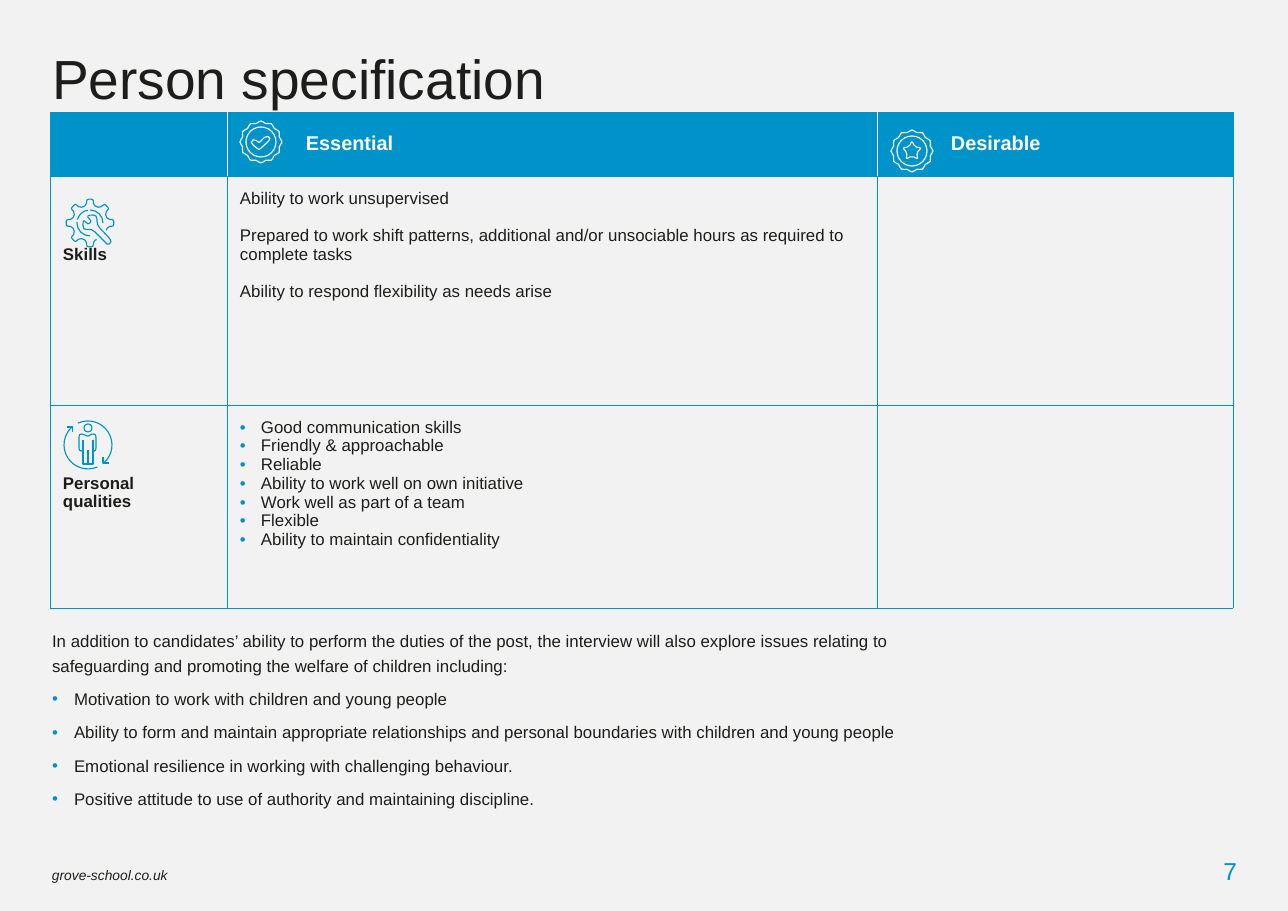
"""Build the person specification slide."""
import dataclasses
import math

import lxml.etree
import pptx
import pptx.dml.color
import pptx.enum.shapes
import pptx.enum.text
import pptx.oxml.ns
import pptx.util

PX = 8298
ALIGN = pptx.enum.text.PP_ALIGN
ANCHOR = pptx.enum.text.MSO_ANCHOR
qn = pptx.oxml.ns.qn


@dataclasses.dataclass(frozen=True)
class Theme:
    """Colours, typeface and type sizes."""
    paper: str = "F2F2F2"
    ink: str = "1D1D1B"
    blue: str = "0093C9"
    white: str = "FFFFFF"
    face: str = "Arial"
    title: int = 36
    number: int = 16
    heading: int = 13
    text: int = 11
    footer: int = 9
    border: float = 0.5
    stroke: float = 0.75


THEME = Theme()

ESSENTIAL_SKILLS = [
    "Ability to work unsupervised",
    "Prepared to work shift patterns, additional and/or unsociable hours as required to complete tasks",
    "Ability to respond flexibility as needs arise",
]
ESSENTIAL_QUALITIES = [
    "Good communication skills", "Friendly & approachable", "Reliable",
    "Ability to work well on own initiative", "Work well as part of a team",
    "Flexible", "Ability to maintain confidentiality",
]
INTERVIEW_INTRO = (
    "In addition to candidates’ ability to perform the duties of the post, the interview will also "
    "explore issues relating to safeguarding and promoting the welfare of children including:")
INTERVIEW_TOPICS = [
    "Motivation to work with children and young people",
    "Ability to form and maintain appropriate relationships and personal boundaries "
    "with children and young people",
    "Emotional resilience in working with challenging behaviour.",
    "Positive attitude to use of authority and maintaining discipline.",
]


def rgb(code):
    return pptx.dml.color.RGBColor.from_string(code)


def set_format(target, **values):
    for name, value in values.items():
        setattr(target, name, value)


def place(shape, left, top, width, height):
    set_format(shape, left=left * PX, top=top * PX, width=width * PX, height=height * PX)


def add_solid(parent, tag, color):
    fill = lxml.etree.SubElement(parent, qn(tag))
    lxml.etree.SubElement(fill, qn("a:srgbClr"), val=color)


def set_bullet(paragraph, indent):
    properties = paragraph._p.get_or_add_pPr()
    properties.set("marL", str(indent * PX))
    properties.set("indent", str(-indent * PX))
    if indent:
        add_solid(properties, "a:buClr", THEME.blue)
        lxml.etree.SubElement(properties, qn("a:buFont"), typeface=THEME.face)
        lxml.etree.SubElement(properties, qn("a:buChar"), char="•")
    else:
        lxml.etree.SubElement(properties, qn("a:buNone"))


def write(frame, lines, size=THEME.text, color=THEME.ink, bold=False, italic=False,
          indents=None, after=0, **layout):
    for index, line in enumerate(lines):
        paragraph = frame.add_paragraph() if index else frame.paragraphs[0]
        set_bullet(paragraph, indents[index] if indents else 0)
        set_format(paragraph, text=line, space_before=pptx.util.Pt(0),
                   space_after=pptx.util.Pt(after), **layout)
        set_format(paragraph.font, name=THEME.face, size=pptx.util.Pt(size), bold=bold, italic=italic)
        paragraph.font.color.rgb = rgb(color)


def set_frame(frame, anchor=ANCHOR.TOP):
    set_format(frame, margin_left=0, margin_top=0, margin_right=0, margin_bottom=0,
               word_wrap=True, auto_size=pptx.enum.text.MSO_AUTO_SIZE.NONE, vertical_anchor=anchor)


def add_label(slide, box, text, **style):
    shape = slide.shapes.add_textbox(0, 0, 0, 0)
    place(shape, *box)
    set_frame(shape.text_frame)
    write(shape.text_frame, [text], **style)


def set_borders(cell, colors):
    properties = cell._tc.get_or_add_tcPr()
    for index, (side, color) in enumerate(zip("LRTB", colors)):
        line = lxml.etree.Element(qn(f"a:ln{side}"), w=str(int(pptx.util.Pt(THEME.border))))
        add_solid(line, "a:solidFill", color)
        properties.insert(index, line)


def fill_cell(cell, fill, borders, lines=(), left=13, top=13, anchor=ANCHOR.TOP, **style):
    cell.fill.solid()
    cell.fill.fore_color.rgb = rgb(fill)
    set_format(cell, margin_left=left * PX, margin_top=top * PX, margin_right=13 * PX,
               margin_bottom=13 * PX, vertical_anchor=anchor)
    write(cell.text_frame, lines, **style)
    set_borders(cell, borders)


def add_specification(slide):
    widths, heights = (177, 650, 356), (64, 229, 203)
    frame = slide.shapes.add_table(3, 3, 50 * PX, 112 * PX, sum(widths) * PX, sum(heights) * PX)
    table = frame.table
    set_format(table, first_row=False, horz_banding=False)
    for column, width in zip(table.columns, widths):
        column.width = width * PX
    for row, height in zip(table.rows, heights):
        row.height = height * PX
    blue, white = THEME.blue, THEME.white
    headings = [([], 13, blue, white), (["Essential"], 79, white, white), (["Desirable"], 74, white, blue)]
    for column, (lines, left, left_color, right_color) in enumerate(headings):
        fill_cell(table.cell(0, column), blue, (left_color, right_color, blue, blue), lines, left,
                  anchor=ANCHOR.MIDDLE, size=THEME.heading, color=white, bold=True)
    label = {"top": 69, "bold": True}
    bullets = {"indents": [21] * len(ESSENTIAL_QUALITIES)}
    rows = [
        [(["Skills"], label), (ESSENTIAL_SKILLS, {"after": 12}), ([], {})],
        [(["Personal", "qualities"], label), (ESSENTIAL_QUALITIES, bullets), ([], {})],
    ]
    for row, cells in enumerate(rows, 1):
        for column, (lines, style) in enumerate(cells):
            fill_cell(table.cell(row, column), THEME.paper, [blue] * 4, lines, **style)


def polar(center, radius, degrees):
    angle = math.radians(degrees)
    return center[0] + radius * math.cos(angle), center[1] + radius * math.sin(angle)


def toward(start, end, share):
    return tuple(a + (b - a) * share for a, b in zip(start, end))


def arc(center, radius, start, end):
    count = math.ceil(abs(end - start) / 90)
    step = (end - start) / count
    reach = 4 / 3 * math.tan(math.radians(step) / 4)
    segments = [[polar(center, radius, start)]]
    for index in range(count):
        first, last = start + index * step, start + (index + 1) * step
        begin, finish = polar(center, radius, first), polar(center, radius, last)
        segments.append([polar(begin, radius * reach, first + 90),
                         polar(finish, radius * reach, last - 90), finish])
    return segments


def rounded(points, radius, closed=True):
    segments = []
    for index, point in enumerate(points):
        if not closed and index in (0, len(points) - 1):
            segments.append([point])
            continue
        before, after = (toward(point, other, min(0.5, radius / math.dist(point, other)))
                         for other in (points[index - 1], points[(index + 1) % len(points)]))
        segments += [[before], [toward(before, point, 2 / 3), toward(after, point, 2 / 3), after]]
    return segments


def scallops(center, tip, valley):
    segments = [[polar(center, tip, 0)]]
    for angle in range(0, 360, 15):
        near, far = (valley, tip) if angle % 30 else (tip, valley)
        segments.append([polar(center, near, angle + 5), polar(center, far, angle + 10),
                         polar(center, far, angle + 15)])
    return segments


def style_outline(shape, color):
    shape.fill.background()
    shape.shadow.inherit = False
    shape.line.color.rgb = rgb(color)
    shape.line.width = pptx.util.Pt(THEME.stroke)
    return shape


def add_outline(slide, segments, color=THEME.blue, closed=False):
    """Draw an outline whose segments hold one point for a line or three for a curve."""
    corners = [(x * PX, y * PX) for segment in segments for x, y in segment]
    builder = slide.shapes.build_freeform(*corners[0], scale=1.0)
    builder.add_line_segments(corners[1:], close=False)
    shape = builder.convert_to_shape()
    steps = list(shape._element.iter(qn("a:lnTo")))
    outline = steps[0].getparent()
    position = 0
    for segment in segments[1:]:
        if len(segment) == 3:
            curve = lxml.etree.Element(qn("a:cubicBezTo"))
            steps[position].addprevious(curve)
            for step in steps[position:position + 3]:
                curve.append(step[0])
                outline.remove(step)
        position += len(segment)
    if closed:
        lxml.etree.SubElement(outline, qn("a:close"))
    return style_outline(shape, color)


def add_circle(slide, center, radius, color=THEME.blue):
    shape = slide.shapes.add_shape(pptx.enum.shapes.MSO_SHAPE.OVAL, 0, 0, 0, 0)
    place(shape, center[0] - radius, center[1] - radius, 2 * radius, 2 * radius)
    return style_outline(shape, color)


def add_line(slide, start, end):
    line = slide.shapes.add_connector(pptx.enum.shapes.MSO_CONNECTOR.STRAIGHT,
                                      *(value * PX for value in (*start, *end)))
    line.line.color.rgb = rgb(THEME.blue)
    line.line.width = pptx.util.Pt(THEME.stroke)
    lxml.etree.SubElement(line._element.spPr, qn("a:effectLst"))
    return line


def add_badge(slide, center, emblem):
    slide.shapes.add_group_shape([
        add_outline(slide, scallops(center, 21, 19), THEME.white, closed=True),
        add_circle(slide, center, 15, THEME.white),
        add_outline(slide, rounded(emblem, 2), THEME.white, closed=True)])


def add_skills_icon(slide):
    center = (90, 223)
    gear = [polar(center, radius, tooth + offset) for tooth in range(90, 361, 45)
            for radius, offset in ((18, -11), (24, -8), (24, 8), (18, 11))]
    gear = [polar(center, 18, 68), *gear, polar(center, 18, 384)]
    wrench = [(111, 240), (97, 225), (97, 215), (89, 215), (87, 217), (92, 221), (88, 225),
              (84, 220), (83, 222), (83, 230), (92, 229), (106, 243), (108, 245), (111, 243)]
    sweeps = [(90, 180), (180, 185), (195, 260), (270, 360)]
    slide.shapes.add_group_shape([
        add_outline(slide, rounded(wrench, 4), closed=True),
        add_outline(slide, rounded(gear, 2, closed=False)),
        *(add_outline(slide, arc(center, 13, *sweep)) for sweep in sweeps)])


def add_qualities_icon(slide):
    center = (88, 445)
    torso = [(93, 451), (96, 451), (96, 434), (91, 434), (88, 437), (84, 434), (79, 434), (79, 451), (83, 451)]
    bends = [[(103, 457), (103, 463), (109, 463)], [(67, 427), (73, 427), (73, 432)],
             [(93, 440), (93, 464), (83, 464), (83, 440)]]
    strokes = [[[point] for point in bend] for bend in bends]
    strokes += [arc(center, 24, 50, -115), arc(center, 24, 230, 67), rounded(torso, 3, closed=False)]
    slide.shapes.add_group_shape([
        *(add_outline(slide, stroke) for stroke in strokes),
        add_circle(slide, (88, 428), 4), add_line(slide, (88, 450), (88, 464))])


def main():
    presentation = pptx.Presentation()
    set_format(presentation, slide_width=1288 * PX, slide_height=911 * PX)
    slide = presentation.slides.add_slide(presentation.slide_layouts[1])
    slide.background.fill.solid()
    slide.background.fill.fore_color.rgb = rgb(THEME.paper)
    title, body = slide.placeholders
    place(title, 52, 50, 1184, 61)
    set_frame(title.text_frame, ANCHOR.BOTTOM)
    write(title.text_frame, ["Person specification"], THEME.title, alignment=ALIGN.LEFT, line_spacing=0.9)
    place(body, 52, 627, 915, 66)
    set_frame(body.text_frame)
    write(body.text_frame, [INTERVIEW_INTRO, *INTERVIEW_TOPICS], after=6, line_spacing=1.2,
          indents=[0] + [22] * len(INTERVIEW_TOPICS))
    for paragraph in body.text_frame.paragraphs[1:]:
        paragraph.level = 1
    add_label(slide, (52, 867, 194, 17), "grove-school.co.uk", size=THEME.footer, italic=True)
    add_label(slide, (1160, 856, 77, 30), "7", size=THEME.number, color=THEME.blue, alignment=ALIGN.RIGHT)
    add_specification(slide)
    tick = [(259, 143), (255, 139), (251, 141), (252, 144), (259, 150), (270, 140), (270, 137), (266, 136)]
    add_badge(slide, (261, 142), tick)
    star_center = (912, 151)
    star = [polar(star_center, 5 if point % 2 else 10, 36 * point - 90) for point in range(10)]
    add_badge(slide, star_center, star)
    add_skills_icon(slide)
    add_qualities_icon(slide)
    presentation.save("out.pptx")


if __name__ == "__main__":
    main()
